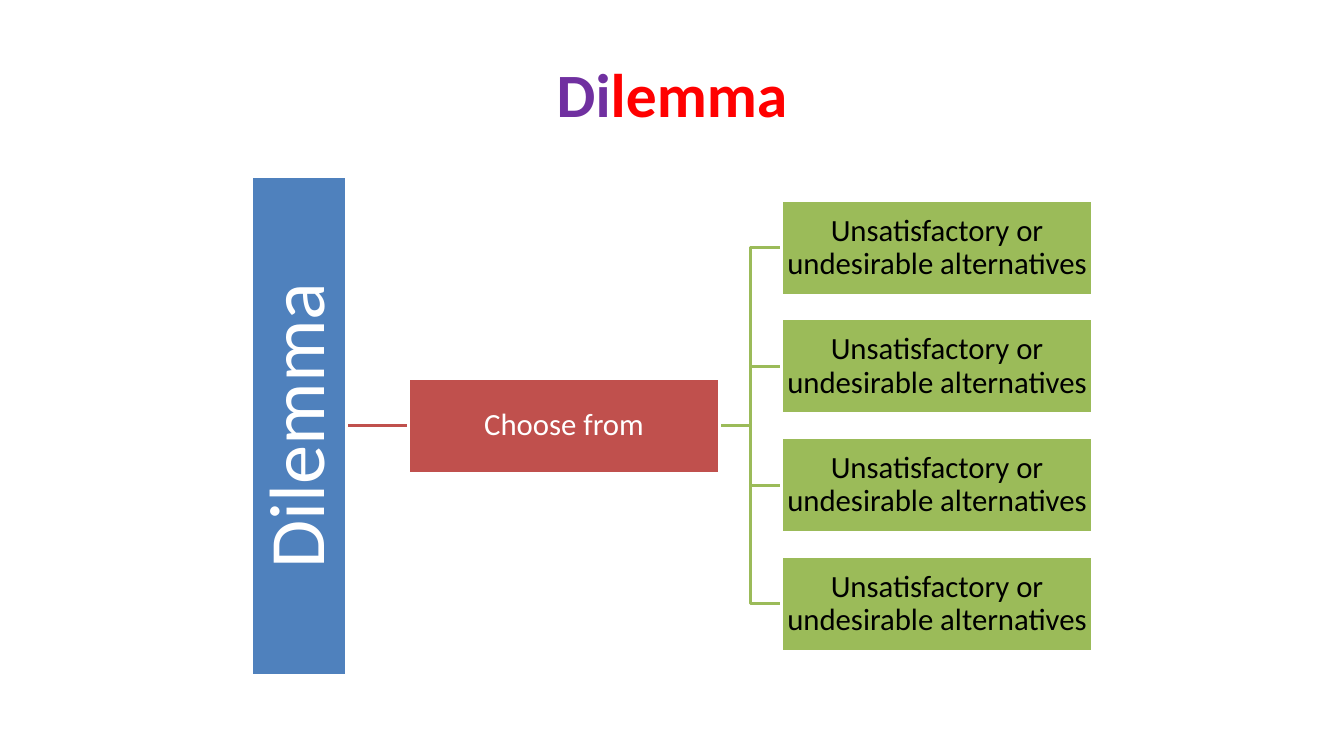
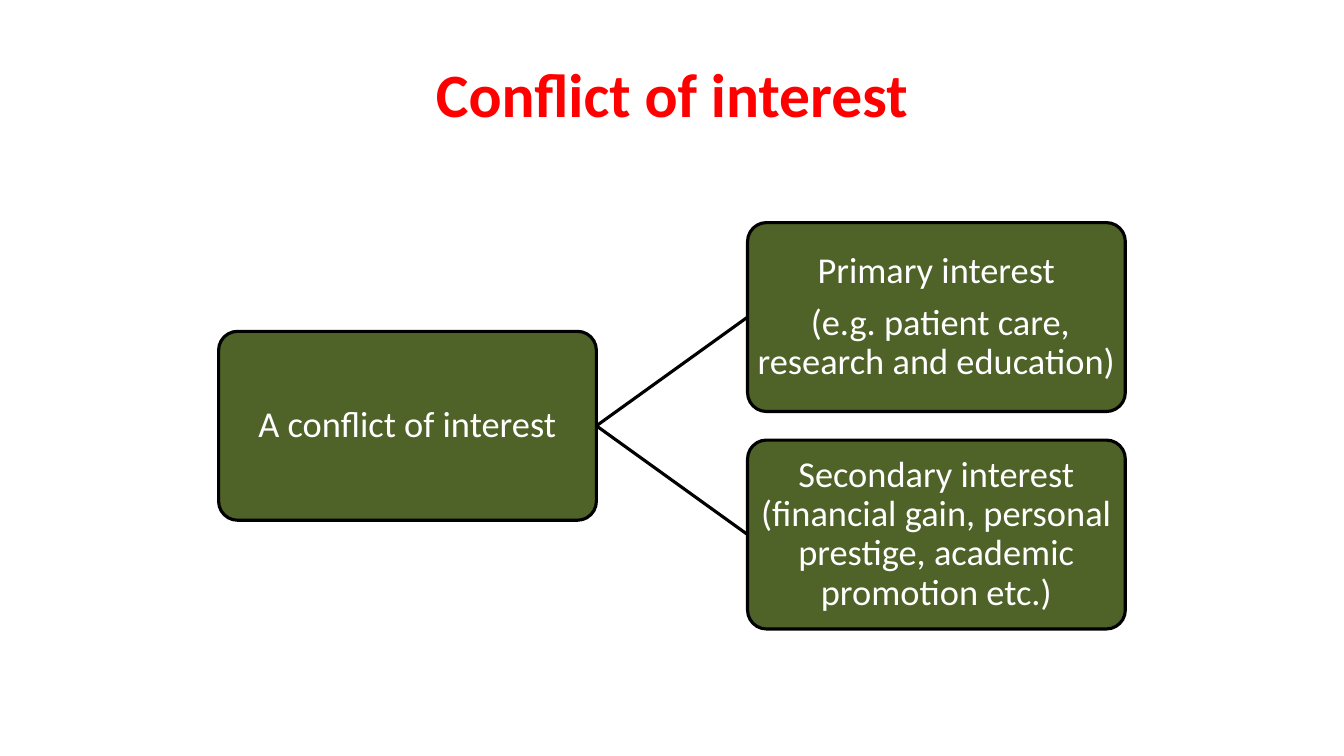
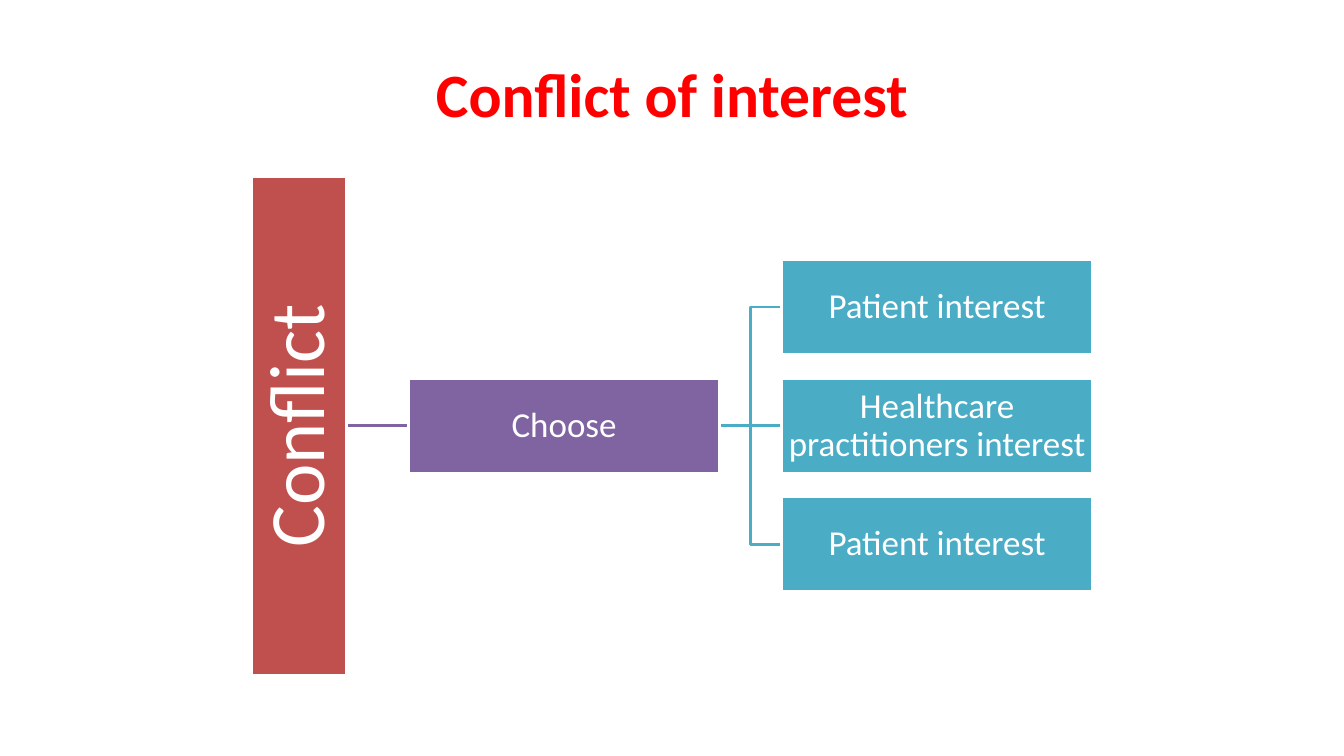
from dataclasses import dataclass

from lxml.etree import SubElement
from pptx import Presentation
from pptx.dml.color import RGBColor
from pptx.enum.shapes import MSO_CONNECTOR as LINK, MSO_SHAPE as SHAPE
from pptx.enum.text import MSO_ANCHOR as ANCHOR, PP_ALIGN as ALIGN
from pptx.oxml.ns import qn
from pptx.util import Cm, Pt

COLORS = {
    "white": "FFFFFF",
    "black": "000000",
    "title": "FF0000",
    "prefix": "7030A0",
    "blue": "4F81BD",
    "red": "C0504D",
    "green": "9BBB59",
    "olive": "4F6228",
    "purple": "8064A2",
    "teal": "4BACC6",
}
FONT = "Calibri"
MIDDLE = 10.73
TOP, LEFT, BOTTOM, RIGHT = range(4)


@dataclass
class Look:
    fill: str
    width: float
    height: float
    size: float
    ink: str = "white"
    edge: str = "white"
    weight: float = 2
    gap: float = 0.6
    outline: SHAPE = SHAPE.RECTANGLE


def rgb(name):
    return RGBColor.from_string(COLORS[name])


def add_run(paragraph, words, size, color, bold=False):
    run = paragraph.add_run()
    run.text = words
    run.font.name = FONT
    run.font.size = Pt(size)
    run.font.bold = bold
    run.font.color.rgb = rgb(color)


def add_title(slide, *parts):
    frame = slide.shapes.add_textbox(Cm(1.7), Cm(0.76), Cm(30.48), Cm(3.18)).text_frame
    frame.word_wrap = True
    frame.vertical_anchor = ANCHOR.MIDDLE
    heading = frame.paragraphs[0]
    heading.alignment = ALIGN.CENTER
    for words, color in parts:
        add_run(heading, words, 44, color, bold=True)


def add_box(slide, left, top, look, lines):
    box = slide.shapes.add_shape(
        look.outline, Cm(left), Cm(top), Cm(look.width), Cm(look.height))
    box.shadow.inherit = False
    box.fill.solid()
    box.fill.fore_color.rgb = rgb(look.fill)
    box.line.color.rgb = rgb(look.edge)
    box.line.width = Pt(look.weight)
    if look.outline == SHAPE.ROUNDED_RECTANGLE:
        box.adjustments[0] = 0.1
    frame = box.text_frame
    frame.word_wrap = True
    frame.vertical_anchor = ANCHOR.MIDDLE
    frame.margin_left = frame.margin_right = Cm(0.05)
    frame.margin_top = frame.margin_bottom = Cm(0.05)
    for index, words in enumerate(lines):
        paragraph = frame.add_paragraph() if index else frame.paragraphs[0]
        paragraph.alignment = ALIGN.CENTER
        paragraph.line_spacing = 0.9
        if index:
            paragraph.space_before = Pt(look.size * 0.35)
        add_run(paragraph, words, look.size, look.ink)
    return box


def add_column(slide, left, look, entries):
    pitch = look.height + look.gap
    first = MIDDLE - look.height / 2 - pitch * (len(entries) - 1) / 2
    return [add_box(slide, left, first + pitch * row, look, lines)
            for row, lines in enumerate(entries)]


def add_link(slide, source, target, color, weight, kind=LINK.STRAIGHT):
    link = slide.shapes.add_connector(kind, 0, 0, 0, 0)
    link.begin_connect(source, RIGHT)
    link.end_connect(target, LEFT)
    link.line.color.rgb = rgb(color)
    link.line.width = Pt(weight)
    SubElement(link.element.spPr, qn("a:effectLst"))
    source.element.addprevious(link.element)


def add_choice_tree(slide, root, choice, options, colors, size, option_ink):
    root_color, choice_color, option_color = colors
    step = 1.57
    root_look = Look(root_color, 2.39, 12.57, 56)
    choice_look = Look(choice_color, 7.83, 2.39, size)
    option_look = Look(option_color, 7.83, 2.39, size, ink=option_ink)
    root_left = 6.34
    choice_left = root_left + root_look.width + step
    option_left = choice_left + choice_look.width + step

    [root_box] = add_column(slide, root_left, root_look, [[root]])
    root_box.text_frame._txBody.bodyPr.set("vert", "vert270")
    [choice_box] = add_column(slide, choice_left, choice_look, [[choice]])
    option_boxes = add_column(
        slide, option_left, option_look, [[option] for option in options])

    add_link(slide, root_box, choice_box, choice_color, 2)
    for option_box in option_boxes:
        level = abs(option_box.top - choice_box.top) < Cm(0.01)
        add_link(slide, choice_box, option_box, option_color, 2,
                 LINK.STRAIGHT if level else LINK.ELBOW)


def add_interest_split(slide, conflict, interests):
    look = Look("olive", 9.52, 4.76, 26, edge="black", weight=2.25, gap=0.72,
                outline=SHAPE.ROUNDED_RECTANGLE)
    conflict_left = 5.51
    [conflict_box] = add_column(slide, conflict_left, look, [[conflict]])
    interest_left = conflict_left + look.width + 3.81
    for interest_box in add_column(slide, interest_left, look, interests):
        add_link(slide, conflict_box, interest_box, look.edge, look.weight)


def main():
    deck = Presentation()
    deck.slide_width, deck.slide_height = Cm(33.87), Cm(19.05)
    dilemma, interests, conflict = [
        deck.slides.add_slide(deck.slide_layouts[6]) for _ in range(3)]

    add_title(dilemma, ("Di", "prefix"), ("lemma", "title"))
    add_choice_tree(
        dilemma, "Dilemma", "Choose from",
        ["Unsatisfactory or undesirable alternatives"] * 4,
        ("blue", "red", "green"), 22, "black")

    for slide in (interests, conflict):
        add_title(slide, ("Conflict of interest", "title"))
    add_interest_split(interests, "A conflict of interest", [
        ["Primary interest", " (e.g. patient care, research and education)"],
        ["Secondary interest (financial gain, personal prestige, "
         "academic promotion etc.)"],
    ])
    add_choice_tree(
        conflict, "Conflict", "Choose",
        ["Patient interest", "Healthcare practitioners interest", "Patient interest"],
        ("red", "purple", "teal"), 25, "white")

    deck.save("out.pptx")


if __name__ == "__main__":
    main()
